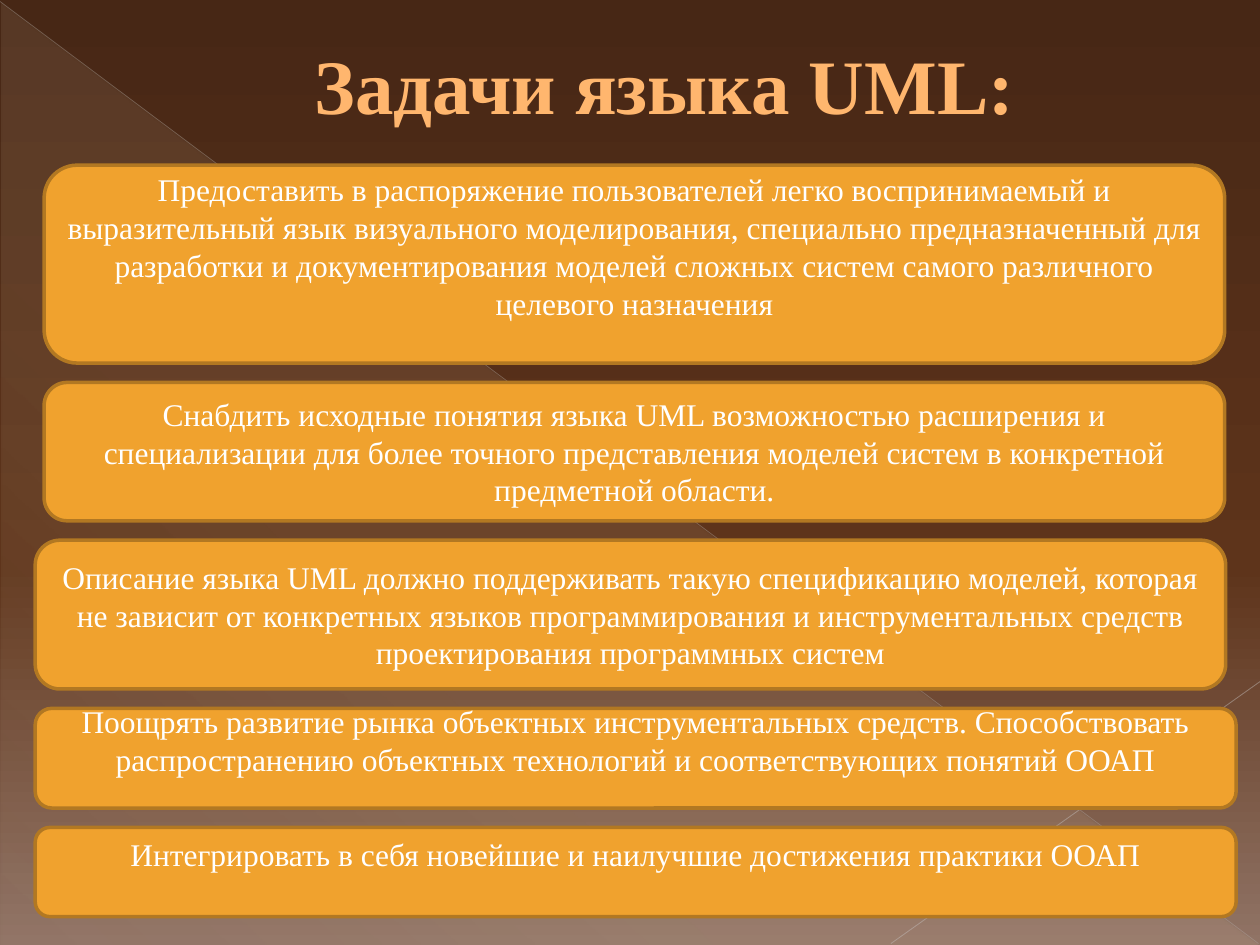
from lxml import etree
from pptx import Presentation
from pptx.dml.color import RGBColor
from pptx.enum.shapes import MSO_CONNECTOR, MSO_SHAPE
from pptx.enum.text import MSO_ANCHOR, PP_ALIGN
from pptx.oxml.ns import qn
from pptx.util import Cm, Pt

LINE = MSO_CONNECTOR.STRAIGHT
TRIANGLE, ROUNDED = MSO_SHAPE.RIGHT_TRIANGLE, MSO_SHAPE.ROUNDED_RECTANGLE
MIDDLE, CENTER = MSO_ANCHOR.MIDDLE, PP_ALIGN.CENTER

FONT = "Times New Roman"
COLORS = {
    "title": "FFB66E", "title outline": "A67020",
    "box": "F0A22E", "box border": "B27822", "text": "FFFFFF",
    "light": "FBEEC9", "falling line": "BCB7B4", "rising line": "C4BFBD",
    "top": "472715", "middle": "5E341B", "bottom": "907365",
}

TITLE = "Задачи языка UML:"
# text, left, right, height, room kept free below the text (cm)
TASKS = [
    ("Предоставить в распоряжение пользователей легко воспринимаемый и "
     "выразительный язык визуального моделирования, специально предназначенный "
     "для разработки и документирования моделей сложных систем самого "
     "различного целевого назначения", 0.89, 24.69, 3.99, 0.72),
    ("Снабдить исходные понятия языка UML возможностью расширения и "
     "специализации для более точного представления моделей систем в "
     "конкретной предметной области.", 0.89, 24.69, 2.79, 0),
    ("Описание языка UML должно поддерживать такую спецификацию моделей, "
     "которая не зависит от конкретных языков программирования и "
     "инструментальных средств проектирования программных систем",
     0.71, 24.71, 3, 0),
    ("Поощрять развитие рынка объектных инструментальных средств. "
     "Способствовать распространению объектных технологий и соответствующих "
     "понятий ООАП", 0.71, 24.92, 2.01, 0.72),
    ("Интегрировать в себя новейшие и наилучшие достижения практики ООАП",
     0.71, 24.92, 1.8, 0.72),
]
FIRST_TOP, GAP = 3.33, 0.39
# color, width (pt), opacity (%), start and end (cm)
LINES = [
    ("falling line", 0.39, 35, (0, 0.03), (25.37, 19.02)),
    ("rising line", 0.47, 45, (25.4, 13.74), (17.96, 19.02)),
]


def rgb(name):
    return RGBColor.from_string(COLORS[name])


def add_color(parent, name, opacity=100):
    color = etree.SubElement(parent, qn("a:srgbClr"), val=COLORS[name])
    if opacity < 100:
        etree.SubElement(color, qn("a:alpha"), val=str(opacity * 1000))


def set_gradient(fill, owner, stops, angle):
    fill.gradient()
    gradient = next(owner.iter(qn("a:gradFill")))
    stop_list = gradient.find(qn("a:gsLst"))
    for old_stop in list(stop_list):
        stop_list.remove(old_stop)
    for position, name, opacity in stops:
        stop = etree.SubElement(stop_list, qn("a:gs"), pos=str(position * 1000))
        add_color(stop, name, opacity)
    gradient.find(qn("a:lin")).set("ang", str(angle * 60000))


def write(shape, text, size, color, bold=False, room_below=0):
    frame = shape.text_frame
    frame.word_wrap = True
    frame.vertical_anchor = MIDDLE
    frame.margin_bottom = Cm(0.13 + room_below)
    para = frame.paragraphs[0]
    para.alignment = CENTER
    span = para.add_run()
    span.text = text
    span.font.name, span.font.size, span.font.bold = FONT, Pt(size), bold
    span.font.color.rgb = rgb(color)
    return para, span


deck = Presentation()
deck.slide_width, deck.slide_height = Cm(25.4), Cm(19.05)
page = deck.slides.add_slide(deck.slide_layouts[6])
shapes = page.shapes

# Background
set_gradient(page.background.fill, page.element,
             [(0, "top", 100), (60, "middle", 100), (100, "bottom", 100)], 90)

# Light triangle and diagonal lines
triangle = shapes.add_shape(TRIANGLE, Cm(0.03), Cm(0.05), Cm(25.35), Cm(19))
triangle.shadow.inherit = False
triangle.line.fill.background()
set_gradient(triangle.fill, triangle.element,
             [(0, "light", 10), (70, "light", 8), (100, "light", 1)], 133)

for name, width, opacity, start, end in LINES:
    line = shapes.add_connector(LINE, *map(Cm, start + end))
    line.line.width = Pt(width)
    line.line.color.rgb = rgb(name)
    color = next(line.element.iter(qn("a:srgbClr")))
    etree.SubElement(color, qn("a:alpha"), val=str(opacity * 1000))
    etree.SubElement(line.element.spPr, qn("a:effectLst"))

# Title
title = shapes.add_textbox(Cm(1.3), Cm(0), Cm(22.86), Cm(3.38))
para, span = write(title, TITLE, 44, "title", bold=True)
para._p.get_or_add_pPr().set("marL", str(Cm(1.35)))
outline = etree.Element(qn("a:ln"), w=str(Pt(0.5)))
add_color(etree.SubElement(outline, qn("a:solidFill")), "title outline")
span.font._element.insert(0, outline)

# Task boxes, stacked with equal gaps
top = FIRST_TOP
for text, left, right, height, room_below in TASKS:
    box = shapes.add_shape(ROUNDED, Cm(left), Cm(top), Cm(right - left), Cm(height))
    box.shadow.inherit = False
    box.fill.solid()
    box.fill.fore_color.rgb = rgb("box")
    box.line.color.rgb = rgb("box border")
    box.line.width = Pt(2)
    write(box, text, 18, "text", room_below=room_below)
    top += height + GAP

deck.save("out.pptx")
